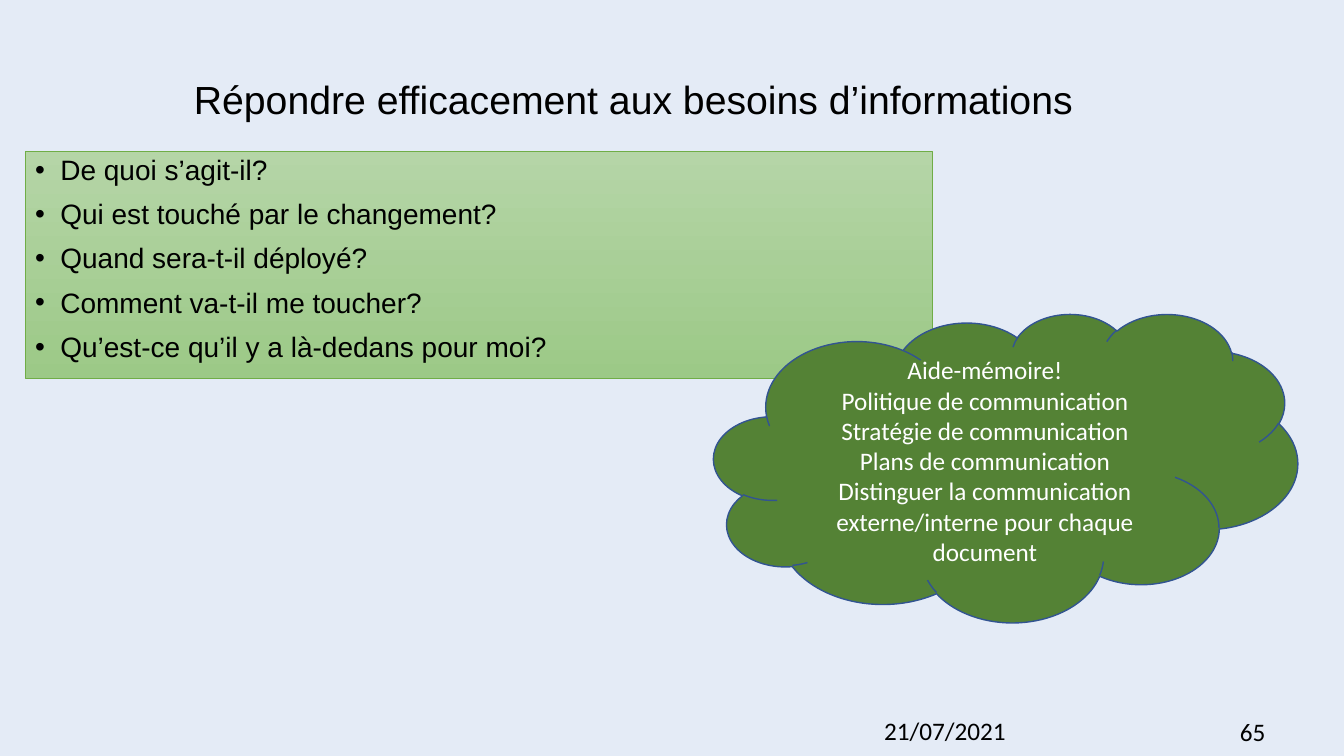
"""Build the slide on answering information needs effectively."""
from dataclasses import dataclass

from lxml.etree import SubElement
from pptx import Presentation
from pptx.dml.color import RGBColor
from pptx.enum.shapes import MSO_SHAPE
from pptx.enum.text import MSO_ANCHOR, PP_ALIGN
from pptx.oxml.ns import qn
from pptx.util import Inches, Pt


@dataclass
class TextStyle:
    font: str
    size: float
    color: str = "000000"
    align: PP_ALIGN = PP_ALIGN.LEFT
    anchor: MSO_ANCHOR = MSO_ANCHOR.TOP
    line_spacing: float = 1.0
    space_before: float = 0
    bullet: str = ""


@dataclass
class Block:
    box: tuple[float, float, float, float]
    lines: list[str]
    style: TextStyle


FOOTER = TextStyle("Calibri", 18)
TITLE = TextStyle("Arial", 28, align=PP_ALIGN.CENTER, anchor=MSO_ANCHOR.MIDDLE,
                  line_spacing=0.9)
QUESTION = TextStyle("Arial", 20, line_spacing=0.9, space_before=10, bullet="•")
REMINDER = TextStyle("Calibri", 18, "FFFFFF", PP_ALIGN.CENTER, MSO_ANCHOR.MIDDLE)

TEXTS = [
    Block((8.67, 7.05, 3, 0.4), ["21/07/2021"], FOOTER),
    Block((12.2, 7.06, 1.1, 0.4), ["65"], FOOTER),
    Block((1.78, 0.54, 9, 0.94),
          ["Répondre efficacement aux besoins d’informations"], TITLE),
]
QUESTIONS = Block((0.25, 1.5, 9, 2.25), [
    "De quoi s’agit-il?",
    "Qui est touché par le changement?",
    "Quand sera-t-il déployé?",
    "Comment va-t-il me toucher?",
    "Qu’est-ce qu’il y a là-dedans pour moi?",
], QUESTION)
CLOUD = Block((7.08, 3.11, 5.79, 3.06), [
    "Aide-mémoire!",
    "Politique de communication",
    "Stratégie de communication",
    "Plans de communication",
    "Distinguer la communication externe/interne pour chaque document",
], REMINDER)


def rgb(color: str) -> RGBColor:
    return RGBColor.from_string(color)


def add_bullet(p, char: str) -> None:
    pPr = p._p.get_or_add_pPr()
    pPr.set("marL", str(Inches(0.25)))
    pPr.set("indent", str(Inches(-0.25)))
    SubElement(pPr, qn("a:buFont")).set("typeface", "Arial")
    SubElement(pPr, qn("a:buChar")).set("char", char)


def write(sp, block: Block) -> None:
    style, tf = block.style, sp.text_frame
    tf.word_wrap = True
    tf.vertical_anchor = style.anchor
    for i, line in enumerate(block.lines):
        p = tf.add_paragraph() if i else tf.paragraphs[0]
        p.alignment = style.align
        p.line_spacing = style.line_spacing
        p.space_before = Pt(style.space_before if i else 0)
        if style.bullet:
            add_bullet(p, style.bullet)
        r = p.add_run()
        r.text = line
        r.font.name = style.font
        r.font.size = Pt(style.size)
        r.font.color.rgb = rgb(style.color)


def add_text(s, block: Block) -> None:
    write(s.shapes.add_textbox(*map(Inches, block.box)), block)


def add_panel(s, kind: MSO_SHAPE, block: Block, fills: list[str],
              line: str, width: float) -> None:
    sp = s.shapes.add_shape(kind, *map(Inches, block.box))
    sp.shadow.inherit = False
    if len(fills) == 1:
        sp.fill.solid()
        sp.fill.fore_color.rgb = rgb(fills[0])
    else:
        sp.fill.gradient()
        sp.fill.gradient_angle = 270
        for stop, color in zip(sp.fill.gradient_stops, fills):
            stop.color.rgb = rgb(color)
    sp.line.color.rgb = rgb(line)
    sp.line.width = Pt(width)
    write(sp, block)


def main() -> None:
    prs = Presentation()
    prs.slide_width, prs.slide_height = Inches(13.33), Inches(7.5)
    s = prs.slides.add_slide(prs.slide_layouts[6])
    s.background.fill.solid()
    s.background.fill.fore_color.rgb = rgb("E4EBF6")
    for block in TEXTS:
        add_text(s, block)
    add_panel(s, MSO_SHAPE.RECTANGLE, QUESTIONS, ["B5D5A7", "9CC987"], "70AD47", 0.5)
    add_panel(s, MSO_SHAPE.CLOUD, CLOUD, ["548235"], "325491", 1)
    prs.save("out.pptx")


if __name__ == "__main__":
    main()
